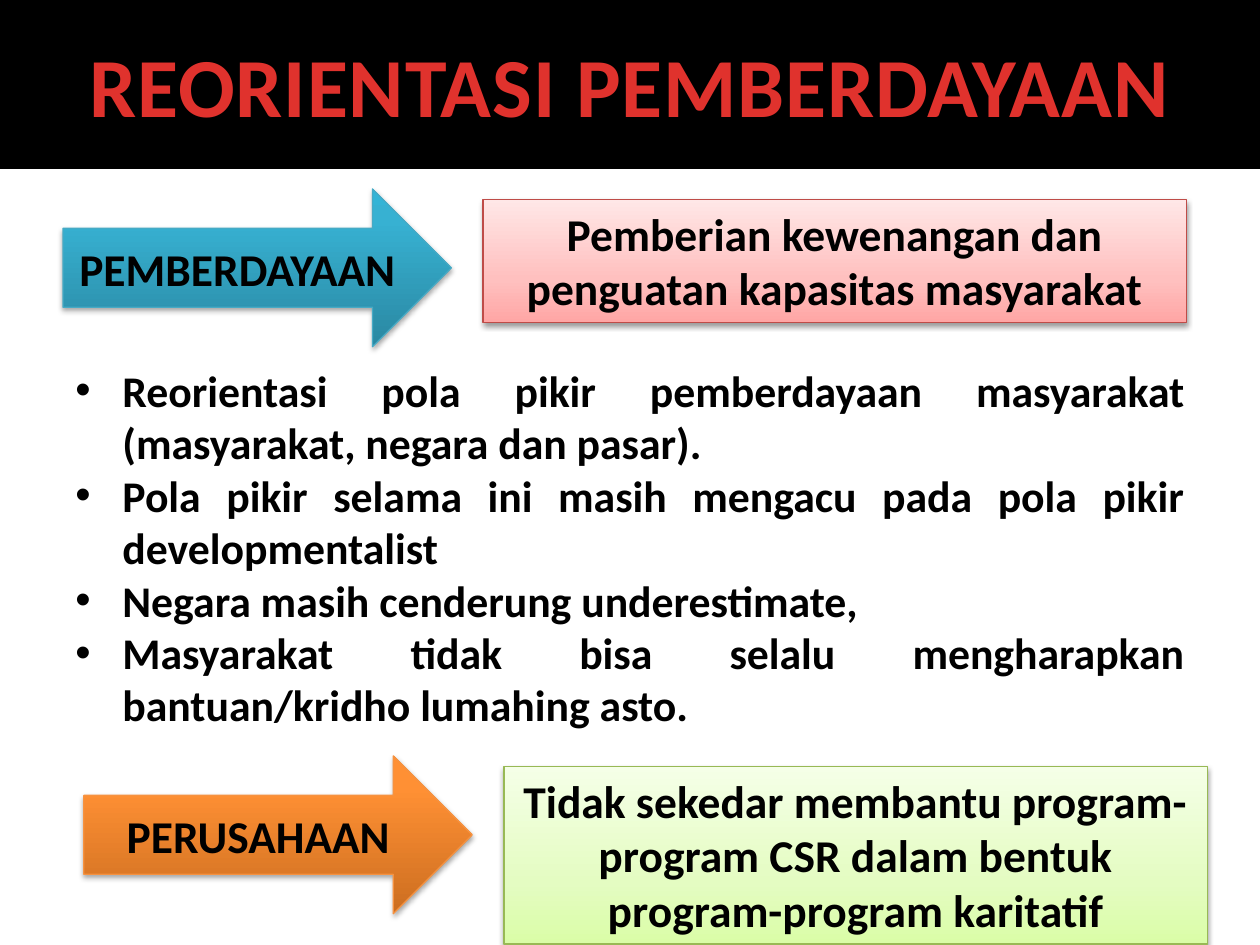
"""Build the slide on the reorientation of empowerment."""
from copy import deepcopy

from lxml import etree
from pptx import Presentation
from pptx import util as u
from pptx.dml.color import RGBColor
from pptx.enum import shapes, text
from pptx.oxml import ns

HUES = {"black": "000000", "red": "E0322D", "rose": "BF4C48",
        "teal": "46AAC5", "lime": "98B955", "amber": "F69240"}
FADES = {"rose": ((0, "FFA6A5"), (0.35, "FFC0BF"), (1, "FFE7E7")),
         "teal": ((0, "2A88A2"), (0.8, "37B1D2"), (1, "34B4D6")),
         "lime": ((0, "DAFDA7"), (0.35, "E4FCC2"), (1, "F5FFE7")),
         "amber": ((0, "CC6E20"), (0.8, "FF9034"), (1, "FF9136"))}
POINTS = ("Reorientasi pola pikir pemberdayaan masyarakat (masyarakat, negara dan pasar).",
          "Pola pikir selama ini masih mengacu pada pola pikir developmentalist",
          "Negara masih cenderung underestimate,",
          "Masyarakat tidak bisa selalu mengharapkan bantuan/kridho lumahing asto.")
ARROW = shapes.MSO_SHAPE.RIGHT_ARROW
BOX = shapes.MSO_SHAPE.RECTANGLE


def rgb(name):
    """Return the named colour."""
    return RGBColor.from_string(HUES[name])


def assign(item, vals):
    """Set each attribute of item from a dict."""
    for key, val in vals.items():
        setattr(item, key, val)


def place(item, area):
    """Move and size an item by its area in centimetres."""
    assign(item, dict(zip(("left", "top", "width", "height"), map(u.Cm, area))))


def write(frame, lines, size, hue="black", align=text.PP_ALIGN.CENTER,
          anchor=text.MSO_ANCHOR.MIDDLE):
    """Fill a text frame with bold paragraphs."""
    assign(frame, {"word_wrap": True, "auto_size": text.MSO_AUTO_SIZE.NONE,
                   "vertical_anchor": anchor})
    for num, line in enumerate(lines):
        para = frame.add_paragraph() if num else frame.paragraphs[0]
        para.alignment = align
        run = para.add_run()
        run.text = line
        assign(run.font, {"name": "Calibri", "size": u.Pt(size), "bold": True})
        run.font.color.rgb = rgb(hue)


def shade(shape, alpha):
    """Give a shape a soft shadow below it."""
    shape.shadow.inherit = False
    glow = etree.SubElement(
        shape._element.spPr.find(ns.qn("a:effectLst")), ns.qn("a:outerShdw"),
        blurRad=str(u.Pt(3.1)), dist=str(u.Pt(1.7)), dir="5400000", rotWithShape="0")
    tone = etree.SubElement(glow, ns.qn("a:srgbClr"), val=HUES["black"])
    etree.SubElement(tone, ns.qn("a:alpha"), val=str(alpha * 1000))


def fade(shape, stops):
    """Fill a shape with a gradient that runs upward."""
    shape.fill.gradient()
    shape.fill.gradient_angle = 90
    row = shape._element.spPr.find(".//" + ns.qn("a:gsLst"))
    row.append(deepcopy(row[0]))
    for stop, (pos, code) in zip(shape.fill.gradient_stops, stops):
        stop.position = pos
        stop.color.rgb = RGBColor.from_string(code)


def add_head(slide, words):
    """Format the title as a black band."""
    head = slide.shapes.title
    place(head, (0, 0, 25.4, 3.38))
    head.fill.solid()
    head.fill.fore_color.rgb = head.line.color.rgb = rgb("black")
    head.line.width = u.Pt(2)
    write(head.text_frame, [words], 48, "red")
    head.text_frame.paragraphs[0].runs[0].font._element.set("spc", "50")


def add_list(slide, lines, area):
    """Add a justified list with bullets."""
    box = slide.shapes.add_textbox(*map(u.Cm, area))
    write(box.text_frame, lines, 25, align=text.PP_ALIGN.JUSTIFY,
          anchor=text.MSO_ANCHOR.TOP)
    for para in box.text_frame.paragraphs:
        prop = para._p.get_or_add_pPr()
        prop.set("marL", str(u.Cm(0.95)))
        prop.set("indent", str(u.Cm(-0.95)))
        etree.SubElement(prop, ns.qn("a:buFont"), typeface="Arial")
        etree.SubElement(prop, ns.qn("a:buChar"), char="•")


def add_block(slide, kind, words, area, hue):
    """Add a shaded arrow or box with its text."""
    shape = slide.shapes.add_shape(kind, *map(u.Cm, area))
    fade(shape, FADES[hue])
    shape.line.color.rgb = rgb(hue)
    shape.line.width = u.Pt(0.75)
    shade(shape, 35 if kind == ARROW else 38)
    anchor = text.MSO_ANCHOR.MIDDLE if kind == ARROW else text.MSO_ANCHOR.TOP
    write(shape.text_frame, [words], 26, anchor=anchor)


def main():
    """Build and save the slide."""
    deck = Presentation()
    assign(deck, {"slide_width": u.Cm(25.4), "slide_height": u.Cm(19.05)})
    slide = deck.slides.add_slide(deck.slide_layouts[5])
    add_head(slide, "REORIENTASI PEMBERDAYAAN")
    add_list(slide, POINTS, (1.27, 7.2, 22.86, 8.26))
    add_block(slide, BOX, "Pemberian kewenangan dan penguatan kapasitas masyarakat",
              (9.74, 4.02, 14.18, 2.48), "rose")
    add_block(slide, ARROW, "PEMBERDAYAAN", (1.27, 3.81, 7.83, 3.18), "teal")
    add_block(slide, BOX, "Tidak sekedar membantu program-program CSR dalam bentuk "
              "program-program karitatif", (10.16, 15.45, 14.18, 3.58), "lime")
    add_block(slide, ARROW, "PERUSAHAAN", (1.69, 15.24, 7.83, 3.18), "amber")
    deck.save("out.pptx")


if __name__ == "__main__":
    main()
